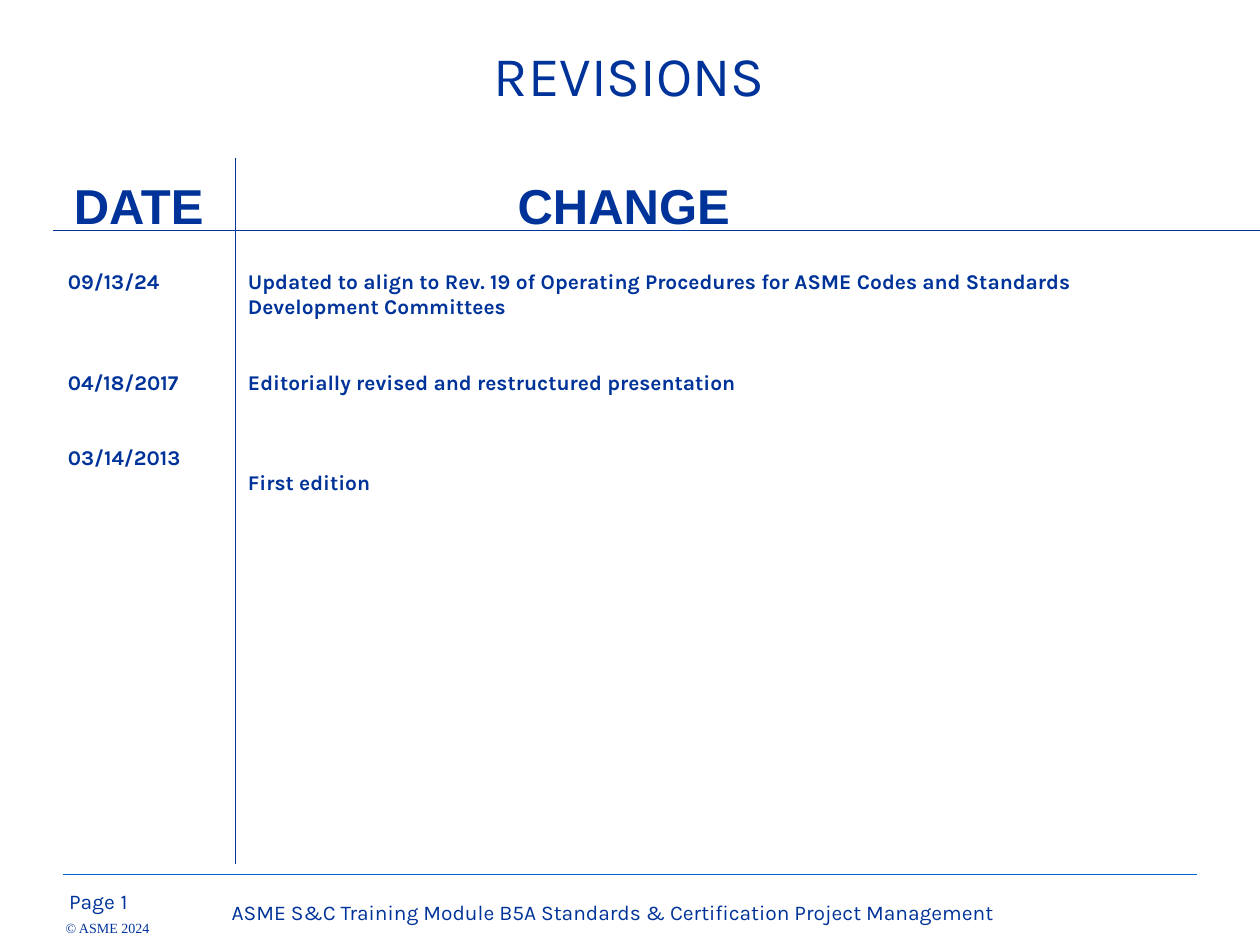
from lxml.etree import SubElement
from pptx import Presentation
from pptx.dml.color import RGBColor
from pptx.enum.shapes import MSO_CONNECTOR as LINK
from pptx.enum.text import MSO_ANCHOR as ANCHOR, PP_ALIGN as ALIGN
from pptx.oxml.ns import qn
from pptx.util import Inches, Pt

NAVY = RGBColor(0x00, 0x33, 0x99)
BLUE = RGBColor(0x00, 0x66, 0xCC)
FONT = "Karla"
STEP = 14.4  # height of one body line, points

# Content: each entry is (text, empty lines above it)
DATES = [("09/13/24", 0), ("04/18/2017", 3), ("03/14/2013", 2)]
CHANGES = [
    ("Updated to align to Rev. 19 of Operating Procedures for ASME Codes "
     "and Standards Development Committees", 0),
    ("Editorially revised and restructured presentation", 2),
    ("First edition", 3),
]
COLUMNS = [
    # left, width, entries
    (0.44, 1.45, DATES),
    (1.87, 6.96, CHANGES),
]
HEADS = [
    # text, left, width
    ("DATE", 0.39, 1.42),
    ("CHANGE", 1.7, 6.5),
]
FOOTER = [
    # text, box, alignment
    ("Page", (0.45, 7, 0.77, 0.26), ALIGN.LEFT),
    ("1", (0.86, 7, 0.47, 0.23), ALIGN.LEFT),
    ("ASME S&C Training Module B5A Standards & Certification Project "
     "Management", (1.53, 7.09, 6.67, 0.26), ALIGN.CENTER),
]
RULES = [
    # start, end, colour, points
    ((0.5, 6.94), (9.5, 6.94), BLUE, 0.75),
    ((1.87, 1.25), (1.87, 6.86), NAVY, 1),
    ((0.42, 1.83), (10, 1.83), NAVY, 1),
]


def style(para, size, name=FONT, bold=False, align=ALIGN.LEFT):
    para.alignment = align
    font = para.font
    font.name, font.size, font.bold = name, Pt(size), bold
    font.color.rgb = NAVY


def add_text(slide, box, entries, size, **look):
    frame = slide.shapes.add_textbox(*map(Inches, box)).text_frame
    frame.word_wrap = True
    for i, (text, gap) in enumerate(entries):
        para = frame.add_paragraph() if i else frame.paragraphs[0]
        para.text = text
        if gap:
            para.space_before = Pt(round(gap * STEP, 1))
        style(para, size, **look)
    return frame


def add_rule(slide, start, end, color, width):
    rule = slide.shapes.add_connector(
        LINK.STRAIGHT, *map(Inches, start + end))
    rule.line.color.rgb = color
    rule.line.width = Pt(width)
    SubElement(rule._element.spPr, qn("a:effectLst"))


def main():
    deck = Presentation()
    deck.slide_width, deck.slide_height = Inches(10), Inches(7.5)
    slide = deck.slides.add_slide(deck.slide_layouts[5])

    # Title
    title = slide.shapes.title
    title.left, title.top = Inches(0.62), Inches(0.17)
    title.width, title.height = Inches(8.75), Inches(0.83)
    title.text_frame.text = "REVISIONS"
    title.text_frame.vertical_anchor = ANCHOR.MIDDLE
    style(title.text_frame.paragraphs[0], 32, align=ALIGN.CENTER)

    # Rules
    for rule in RULES:
        add_rule(slide, *rule)

    # Column heads and entries
    for text, left, width in HEADS:
        add_text(slide, (left, 1.34, width, 0.55), [(text, 0)], 28,
                 name="Arial", bold=True, align=ALIGN.CENTER)
    for left, width, entries in COLUMNS:
        add_text(slide, (left, 2.08, width, 4.75), entries, 12, bold=True)

    # Footer
    for text, box, align in FOOTER:
        add_text(slide, box, [(text, 0)], 12, align=align)
    mark = add_text(slide, (0.52, 7.3, 0.68, 0.13), [("© ASME 2024", 0)], 8,
                    name="Times New Roman")
    mark.word_wrap = False
    mark.margin_left = mark.margin_right = 0
    mark.margin_top = mark.margin_bottom = 0

    deck.save("out.pptx")


if __name__ == "__main__":
    main()
